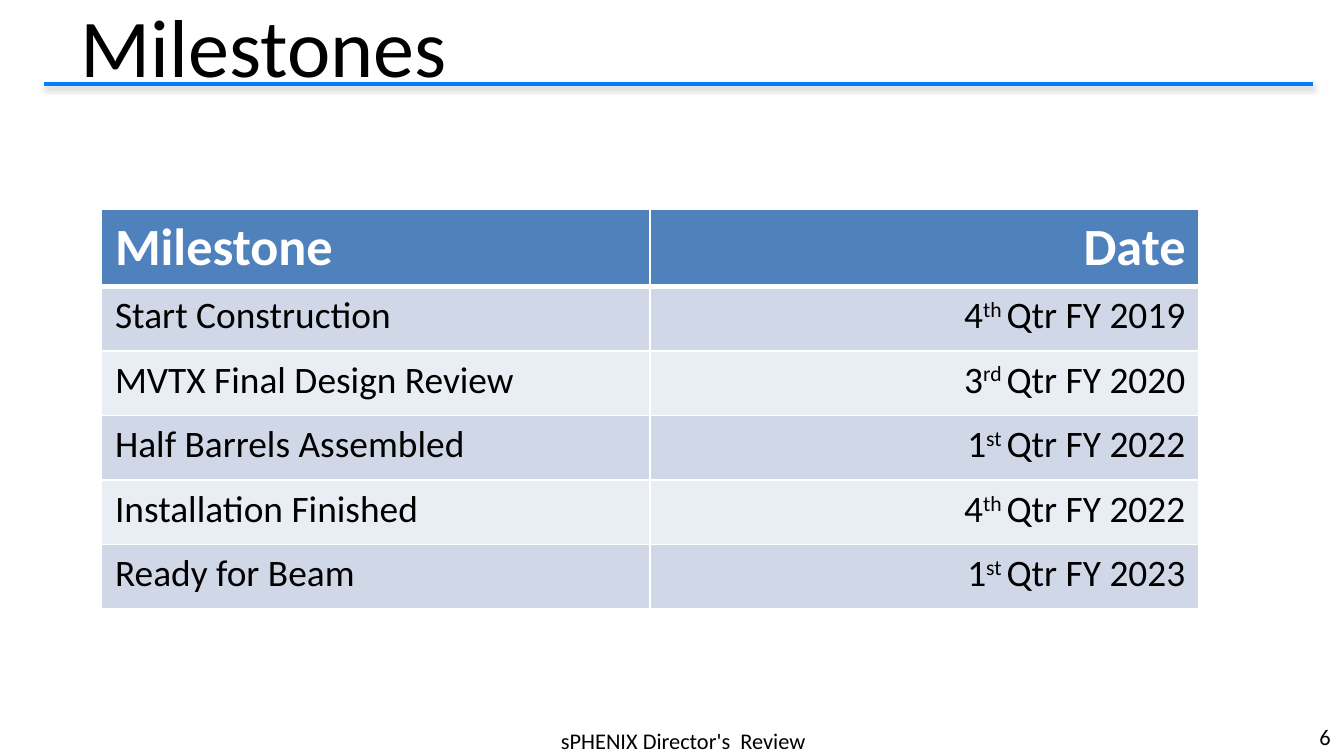
from lxml.etree import SubElement
from pptx import Presentation
from pptx.dml.color import RGBColor
from pptx.enum.shapes import MSO_CONNECTOR as CONN
from pptx.enum.text import MSO_ANCHOR as ANCHOR, MSO_AUTO_SIZE as AUTO, PP_ALIGN as ALIGN
from pptx.oxml import parse_xml
from pptx.oxml.ns import nsdecls, qn
from pptx.util import Cm, Pt


def rgb(color):
    return RGBColor.from_string(color)


def add_run(p, text, size=12, color="000000", bold=False, raised=False):
    r = p.add_run()
    r.text = text
    r.font.name, r.font.size, r.font.bold = "Calibri", Pt(size), bold
    r.font.color.rgb = rgb(color)
    if raised:
        r._r.get_or_add_rPr().set("baseline", "30000")


class SlideBuilder:
    font_title, font_header, font_body = 44, 28, 20
    blue, header_fill, bands = "0080FF", "4F81BD", ("D0D8E8", "E9EDF4")
    white = "FFFFFF"

    def __init__(self, prs):
        self.slide = prs.slides.add_slide(prs.slide_layouts[5])
        self.slide.background.fill.solid()
        self.slide.background.fill.fore_color.rgb = rgb(self.white)

    def rule(self, x1, x2, y):
        line = self.slide.shapes.add_connector(CONN.STRAIGHT, Cm(x1), Cm(y), Cm(x2), Cm(y))
        line.line.color.rgb = rgb(self.blue)
        line.line.width = Pt(2.25)
        line._element.spPr.append(parse_xml(
            f'<a:effectLst {nsdecls("a")}>'
            '<a:outerShdw blurRad="39370" dist="20320" dir="5400000" rotWithShape="0">'
            '<a:srgbClr val="808080"><a:alpha val="38000"/></a:srgbClr>'
            '</a:outerShdw></a:effectLst>'))

    def title(self, text, x, y, w, h):
        sp = self.slide.shapes.title
        sp.left, sp.top, sp.width, sp.height = Cm(x), Cm(y), Cm(w), Cm(h)
        self.fill_frame(sp.text_frame, text, ALIGN.LEFT, size=self.font_title)

    def text(self, text, x, y, w, h, align):
        sp = self.slide.shapes.add_textbox(Cm(x), Cm(y), Cm(w), Cm(h))
        self.fill_frame(sp.text_frame, text, align)

    def fill_frame(self, tf, text, align, **fmt):
        tf.word_wrap, tf.auto_size = True, AUTO.NONE
        tf.vertical_anchor = ANCHOR.MIDDLE
        p = tf.paragraphs[0]
        p.alignment = align
        add_run(p, text, **fmt)

    def table(self, header, rows, x, y, w, header_h, row_h):
        height = header_h + row_h * len(rows)
        table = self.slide.shapes.add_table(
            len(rows) + 1, len(header), Cm(x), Cm(y), Cm(w), Cm(height)).table
        for col in table.columns:
            col.width = Cm(w / len(header))
        for i, row in enumerate(table.rows):
            row.height = Cm(row_h if i else header_h)

        # Header row
        for j, name in enumerate(header):
            p = self.cell(table, 0, j, self.header_fill)
            add_run(p, name, size=self.font_header, color=self.white, bold=True)

        # Banded rows, with raised ordinal endings
        for i, (name, number, ending, period) in enumerate(rows, 1):
            fill = self.bands[(i - 1) % 2]
            add_run(self.cell(table, i, 0, fill), name, size=self.font_body)
            p = self.cell(table, i, 1, fill)
            add_run(p, number, size=self.font_body)
            add_run(p, ending + " ", size=self.font_body, raised=True)
            add_run(p, period, size=self.font_body)

    def cell(self, table, i, j, fill):
        cell = table.cell(i, j)
        tc_pr = cell._tc.get_or_add_tcPr()
        for side in "LRTB":
            thick = (i, side) in ((0, "B"), (1, "T"))
            ln = SubElement(tc_pr, qn(f"a:ln{side}"), w=str(Pt(3 if thick else 1)))
            solid = SubElement(ln, qn("a:solidFill"))
            SubElement(solid, qn("a:srgbClr"), val=self.white)
        cell.fill.solid()
        cell.fill.fore_color.rgb = rgb(fill)
        p = cell.text_frame.paragraphs[0]
        p.alignment = ALIGN.RIGHT if j else ALIGN.LEFT
        return p


def main():
    prs = Presentation()
    prs.slide_width, prs.slide_height = Cm(25.4), Cm(14.29)
    s = SlideBuilder(prs)

    # Heading
    s.rule(0.84, 24.82, 1.59)
    s.title("Milestones", 1.27, 0.08, 22.86, 1.52)

    # Milestone table
    milestones = [
        ("Start Construction", "4", "th", "Qtr FY 2019"),
        ("MVTX Final Design Review", "3", "rd", "Qtr FY 2020"),
        ("Half Barrels Assembled", "1", "st", "Qtr FY 2022"),
        ("Installation Finished", "4", "th", "Qtr FY 2022"),
        ("Ready for Beam", "1", "st", "Qtr FY 2023"),
    ]
    s.table(("Milestone", "Date"), milestones, 1.92, 3.95, 20.74, 1.36, 1.22)

    # Footer
    s.text("sPHENIX Director's  Review", 8.89, 13.69, 8.05, 0.61, ALIGN.CENTER)
    s.text("6", 23.93, 13.54, 1.47, 0.76, ALIGN.RIGHT)

    prs.save("out.pptx")


if __name__ == "__main__":
    main()
